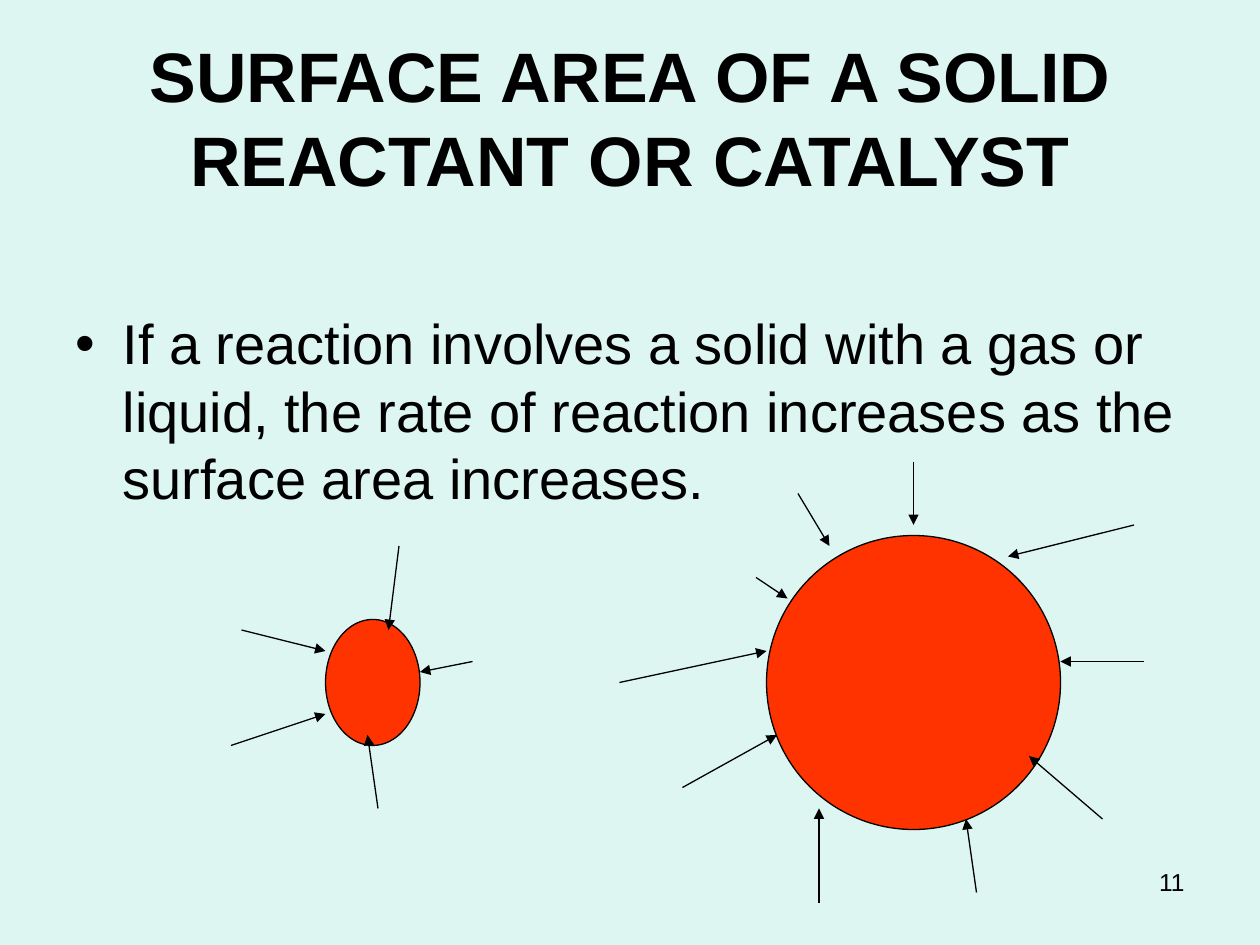
from dataclasses import dataclass
from lxml.etree import SubElement as Sub
from pptx import Presentation as Deck
from pptx.dml.color import RGBColor as Color
from pptx.enum.shapes import MSO_CONNECTOR as Link, MSO_SHAPE as Form
from pptx.enum.text import MSO_ANCHOR as Anchor, PP_ALIGN as Align
from pptx.oxml.ns import qn
from pptx.util import Pt


@dataclass(frozen=True)
class Theme:
    back: str = "DEF6F1"
    ink: str = "000000"
    solid: str = "FF3300"
    font: str = "Arial"
    head: int = 40
    body: int = 32
    foot: int = 14
    line: float = 0.75
    hang: int = 27


class Page:
    """Draws styled elements on one slide, with lengths in points."""

    def __init__(self, slide, theme):
        self.slide, self.theme = slide, theme
        fill = slide.background.fill
        fill.solid()
        fill.fore_color.rgb = Color.from_string(theme.back)

    def text(self, words, box, size, align=Align.LEFT, bold=False, anchor=Anchor.TOP):
        frame = self.slide.shapes.add_textbox(*map(Pt, box)).text_frame
        frame.word_wrap = True
        frame.vertical_anchor = anchor
        frame.text = words
        para = frame.paragraphs[0]
        para.alignment = align
        font = para.runs[0].font
        font.name, font.size, font.bold = self.theme.font, Pt(size), bold
        font.color.rgb = Color.from_string(self.theme.ink)
        return para

    def bullet(self, words, box):
        props = self.text(words, box, self.theme.body)._p.get_or_add_pPr()
        hang = Pt(self.theme.hang)
        props.set("marL", str(hang))
        props.set("indent", str(-hang))
        Sub(props, qn("a:buFont"), typeface=self.theme.font)
        Sub(props, qn("a:buChar"), char="•")

    def stroke(self, line):
        line.color.rgb = Color.from_string(self.theme.ink)
        line.width = Pt(self.theme.line)

    def grain(self, box):
        shape = self.slide.shapes.add_shape(Form.OVAL, *map(Pt, box))
        shape.shadow.inherit = False
        shape.fill.solid()
        shape.fill.fore_color.rgb = Color.from_string(self.theme.solid)
        self.stroke(shape.line)

    def arrow(self, start, end):
        link = self.slide.shapes.add_connector(Link.STRAIGHT, *map(Pt, start + end))
        self.stroke(link.line)
        Sub(link.line._get_or_add_ln(), qn("a:tailEnd"), type="triangle")
        Sub(link._element.spPr, qn("a:effectLst"))


SMALL = [
    ((138, 360), (186, 372)),
    ((132, 426), (186, 408)),
    ((216, 462), (210, 420)),
    ((270, 378), (240, 384)),
    ((228, 312), (222, 360)),
]
LARGE = [
    ((432, 330), (450, 342)),
    ((390, 450), (444, 420)),
    ((354, 390), (438, 372)),
    ((468, 516), (468, 462)),
    ((558, 510), (552, 468)),
    ((630, 468), (588, 432)),
    ((654, 378), (606, 378)),
    ((648, 300), (576, 318)),
    ((522, 264), (522, 300)),
    ((456, 282), (474, 312)),
]


def main():
    deck = Deck()
    deck.slide_width, deck.slide_height = Pt(720), Pt(540)
    theme = Theme()
    page = Page(deck.slides.add_slide(deck.slide_layouts[6]), theme)
    page.text("11", (516, 492, 168, 37.5), theme.foot, Align.RIGHT)
    page.text("SURFACE AREA OF A SOLID REACTANT OR CATALYST", (36, 21.6, 648, 90),
              theme.head, Align.CENTER, True, Anchor.MIDDLE)
    page.bullet("If a reaction involves a solid with a gas or liquid, "
                "the rate of reaction increases as the surface area increases.",
                (36, 173, 648, 309))
    for box in (186, 354, 54, 72), (438, 306, 168, 168):
        page.grain(box)
    for start, end in SMALL + LARGE:
        page.arrow(start, end)
    deck.save("out.pptx")


if __name__ == "__main__":
    main()
